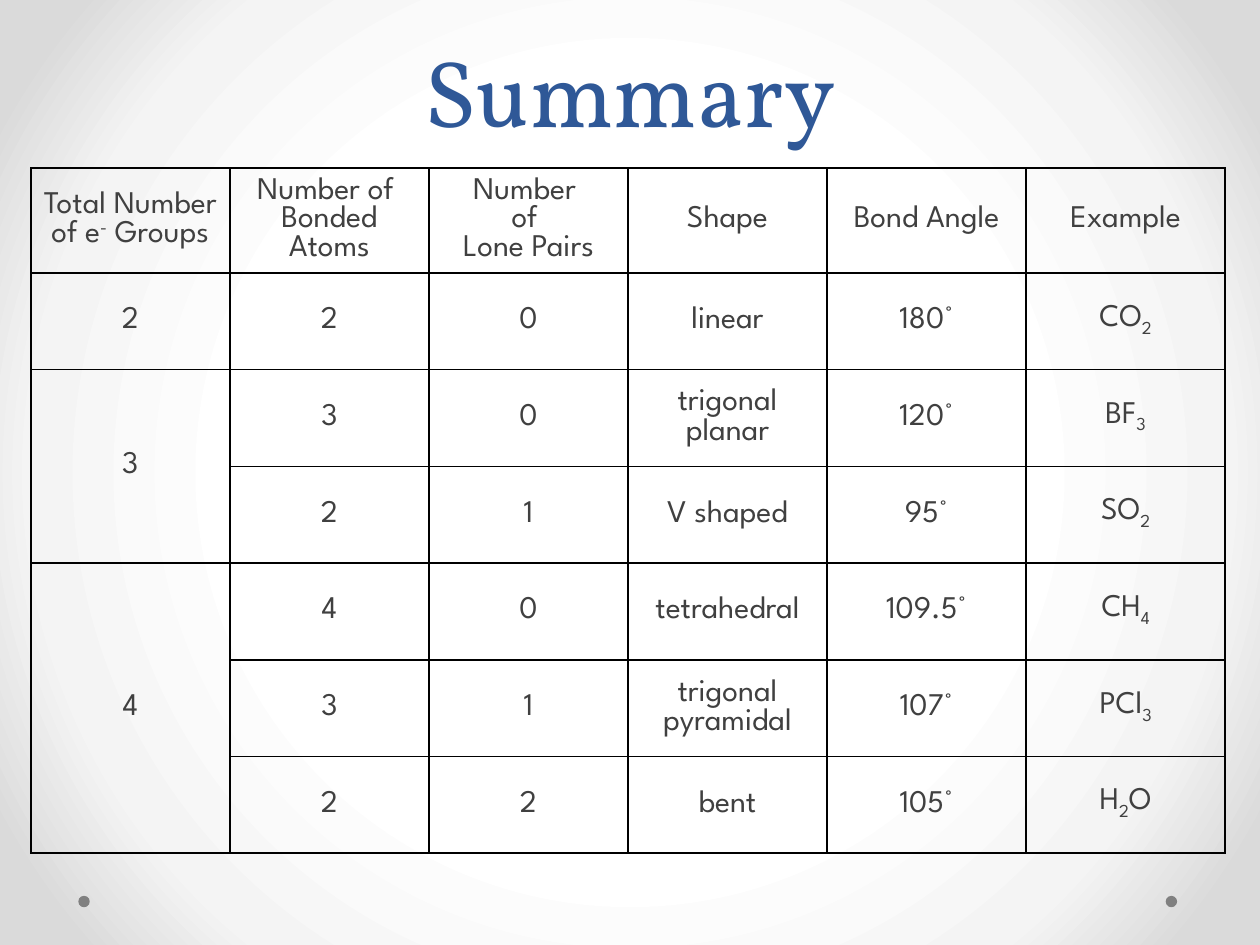
"""Build a summary slide of molecular shapes by number of electron groups."""
from lxml.etree import SubElement, fromstring
from pptx import Presentation
from pptx.dml.color import RGBColor
from pptx.enum.shapes import MSO_SHAPE
from pptx.enum.text import MSO_ANCHOR, PP_ALIGN
from pptx.oxml.ns import qn
from pptx.util import Cm, Pt

COLORS = {
    "title": "2F5897", "body": "404040", "border": "000000", "dot": "808080",
    "center": "FFFFFF", "middle": "F4F4F4", "edge": "DADADA",
}
TITLE_FONT = {"name": "Vollkorn", "size": Pt(54), "bold": False}
BODY_FONT = {"name": "League Spartan", "size": Pt(18), "bold": False}
ROWS = [
    ["Total Number of e_-_ Groups", "Number of \nBonded Atoms",
     "Number \nof \nLone Pairs", "Shape", "Bond Angle", "Example"],
    ["2", "2", "0", "linear", "180°", "CO_2"],
    ["3", "3", "0", "trigonal planar", "120°", "BF_3"],
    ["", "2", "1", "V shaped", "95°", "SO_2"],
    ["4", "4", "0", "tetrahedral", "109.5°", "CH_4"],
    ["", "3", "1", "trigonal pyramidal", "107°", "PCl_3"],
    ["", "2", "2", "bent", "105°", "H_2_O"],
]
GROUP_SPANS = [(2, 3), (4, 6)]


def write_line(paragraph, line, font_format, color):
    """Write a centred line in which every second part between underscores is raised or lowered."""
    paragraph.alignment = PP_ALIGN.CENTER
    for index, part in enumerate(line.split("_")):
        if not part:
            continue
        run = paragraph.add_run()
        run.text = part
        for key, value in font_format.items():
            setattr(run.font, key, value)
        run.font.color.rgb = RGBColor.from_string(COLORS[color])
        if index % 2:
            run._r.get_or_add_rPr().set("baseline", "30000" if part == "-" else "-25000")


def add_borders(cell):
    """Draw a one-point line on each side of the cell."""
    properties = cell._tc.get_or_add_tcPr()
    for position, side in enumerate(("lnL", "lnR", "lnT", "lnB")):
        line = SubElement(properties, qn(f"a:{side}"), w=str(Pt(1)))
        fill = SubElement(line, qn("a:solidFill"))
        SubElement(fill, qn("a:srgbClr"), val=COLORS["border"])
        properties.insert(position, line)


presentation = Presentation()
presentation.slide_width, presentation.slide_height = Cm(25.4), Cm(19.05)
slide = presentation.slides.add_slide(presentation.slide_layouts[6])

stops = "".join(
    f'<a:gs pos="{percent * 1000}"><a:srgbClr val="{COLORS[shade]}"/></a:gs>'
    for percent, shade in [(50, "center"), (76, "middle"), (92, "edge")]
)
slide.element.cSld.insert(0, fromstring(
    '<p:bg xmlns:p="http://schemas.openxmlformats.org/presentationml/2006/main"'
    ' xmlns:a="http://schemas.openxmlformats.org/drawingml/2006/main">'
    f'<p:bgPr><a:gradFill rotWithShape="1"><a:gsLst>{stops}</a:gsLst><a:path path="circle">'
    '<a:fillToRect l="50000" t="50000" r="50000" b="50000"/></a:path></a:gradFill>'
    '<a:effectLst/></p:bgPr></p:bg>'
))

for dot_left in (23.5, 1.58):
    dot = slide.shapes.add_shape(MSO_SHAPE.OVAL, Cm(dot_left), Cm(18.06), Cm(0.23), Cm(0.23))
    dot.shadow.inherit = False
    dot.fill.solid()
    dot.fill.fore_color.rgb = RGBColor.from_string(COLORS["dot"])
    dot.line.fill.background()

title = slide.shapes.add_textbox(Cm(1.27), Cm(0), Cm(22.86), Cm(3.07)).text_frame
for key, value in {"word_wrap": True, "vertical_anchor": MSO_ANCHOR.BOTTOM}.items():
    setattr(title, key, value)
title.paragraphs[0].line_spacing = Pt(58)
write_line(title.paragraphs[0], "Summary", TITLE_FONT, "title")

summary_frame = slide.shapes.add_table(
    len(ROWS), len(ROWS[0]), Cm(0.62), Cm(3.39), Cm(24.08), Cm(14.25)
)
summary = summary_frame.table
for key, value in {"first_row": False, "horz_banding": False}.items():
    setattr(summary, key, value)
for column in summary.columns:
    column.width = Cm(24.08) // len(ROWS[0])
for row_number, row in enumerate(summary.rows):
    row.height = Cm(1.95) if row_number else Cm(2.11)
summary_frame.height = Cm(14.25)
for first, last in GROUP_SPANS:
    summary.cell(first, 0).merge(summary.cell(last, 0))

for row_number, entries in enumerate(ROWS):
    for column_number, entry in enumerate(entries):
        cell = summary.cell(row_number, column_number)
        cell.vertical_anchor = MSO_ANCHOR.MIDDLE
        cell.fill.background()
        add_borders(cell)
        for line_number, line in enumerate(entry.split("\n")):
            frame = cell.text_frame
            paragraph = frame.add_paragraph() if line_number else frame.paragraphs[0]
            if row_number == 0:
                paragraph.line_spacing = Pt(16.5)
            write_line(paragraph, line, BODY_FONT, "body")

presentation.save("out.pptx")
